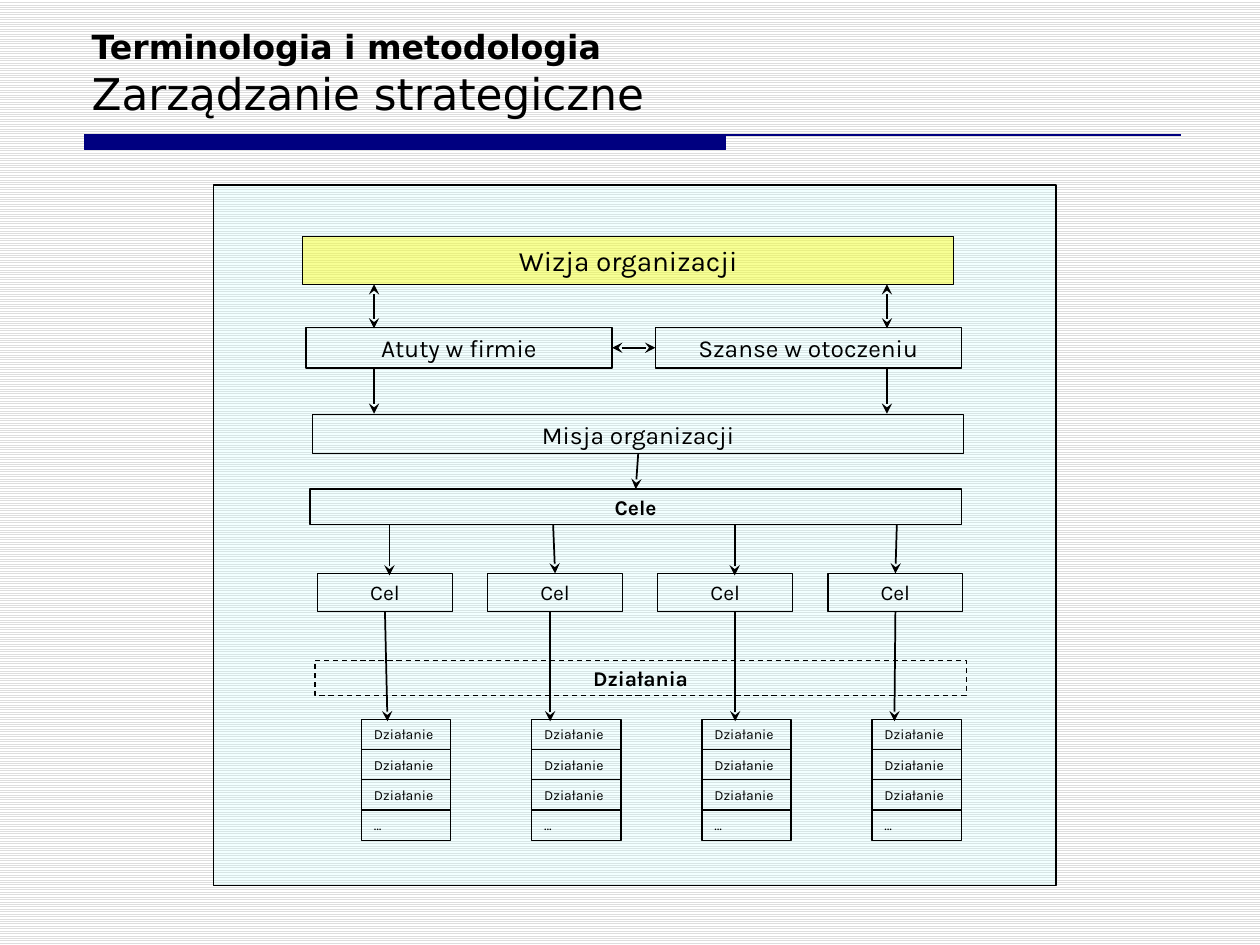
from pptx import Presentation
from pptx.dml.color import RGBColor
from pptx.enum.dml import MSO_LINE, MSO_PATTERN
from pptx.enum.shapes import MSO_CONNECTOR, MSO_SHAPE
from pptx.enum.text import MSO_ANCHOR, PP_ALIGN
from pptx.oxml.ns import qn
from pptx.util import Cm, Pt
from lxml.etree import SubElement

BLACK, NAVY = "000000", "000080"


def color(value):
    return RGBColor.from_string(value)


class Diagram:
    """Draws the parts of a strategy diagram on one slide."""

    body_font = "Karla"
    title_font = "DejaVu Sans"
    snap = Cm(0.08)

    def __init__(self, slide):
        self.slide = slide
        self.boxes = []

    def background(self, fore, back):
        fill = self.slide.background.fill
        fill.patterned()
        fill.pattern = MSO_PATTERN.LIGHT_HORIZONTAL
        fill.fore_color.rgb = color(fore)
        fill.back_color.rgb = color(back)

    def title(self, x, y, w, h, lines):
        frame = self.slide.shapes.add_textbox(Cm(x), Cm(y), Cm(w), Cm(h)).text_frame
        frame.word_wrap = True
        frame.vertical_anchor = MSO_ANCHOR.BOTTOM
        heading = frame.paragraphs[0]
        heading.font.name = self.title_font
        heading.font.color.rgb = color(BLACK)
        for index, (words, size, bold) in enumerate(lines):
            if index:
                heading.add_line_break()
            run = heading.add_run()
            run.text = words
            run.font.size = Pt(size)
            run.font.bold = bold

    def box(self, x, y, w, h, fill=None, opacity=100, line=BLACK, dashed=False):
        box = self.slide.shapes.add_shape(MSO_SHAPE.RECTANGLE, Cm(x), Cm(y), Cm(w), Cm(h))
        box.shadow.inherit = False
        if fill:
            box.fill.solid()
            box.fill.fore_color.rgb = color(fill)
            if opacity < 100:
                tint = box.fill._xPr.find(qn("a:solidFill"))[0]
                SubElement(tint, qn("a:alpha"), val=str(opacity * 1000))
        else:
            box.fill.background()
        box.line.color.rgb = color(line)
        box.line.width = Pt(0.75)
        if dashed:
            box.line.dash_style = MSO_LINE.DASH
        self.boxes.append(box)
        return box

    def label(self, words, size, x, y, w, h, bold=False, align=PP_ALIGN.CENTER, **style):
        frame = self.box(x, y, w, h, **style).text_frame
        frame.word_wrap = True
        frame.vertical_anchor = MSO_ANCHOR.MIDDLE
        paragraph = frame.paragraphs[0]
        paragraph.text = words
        paragraph.alignment = align
        font = paragraph.font
        font.name, font.size, font.bold = self.body_font, Pt(size), bold
        font.color.rgb = color(BLACK)

    def join(self, connect, x, y):
        for box in self.boxes:
            middle, center = box.left + box.width // 2, box.top + box.height // 2
            sides = [(middle, box.top), (box.left, center),
                     (middle, box.top + box.height), (box.left + box.width, center)]
            for site, (side_x, side_y) in enumerate(sides):
                if max(abs(side_x - x), abs(side_y - y)) <= self.snap:
                    connect(box, site)
                    return

    def line(self, x1, y1, x2, y2, stroke=BLACK, width=1, ends=()):
        start, finish = (Cm(x1), Cm(y1)), (Cm(x2), Cm(y2))
        line = self.slide.shapes.add_connector(MSO_CONNECTOR.STRAIGHT, *start, *finish)
        line.line.color.rgb = color(stroke)
        line.line.width = Pt(width)
        for end in ends:
            SubElement(line.line._get_or_add_ln(), qn(end), type="stealth")
        SubElement(line._element.spPr, qn("a:effectLst"))
        if ends:
            self.join(line.begin_connect, *start)
            self.join(line.end_connect, *finish)

    def arrow(self, x1, y1, x2, y2):
        self.line(x1, y1, x2, y2, ends=["a:tailEnd"])

    def double_arrow(self, x1, y1, x2, y2):
        self.line(x1, y1, x2, y2, ends=["a:headEnd", "a:tailEnd"])


def main():
    deck = Presentation()
    deck.slide_width, deck.slide_height = Cm(25.4), Cm(19.05)
    diagram = Diagram(deck.slides.add_slide(deck.slide_layouts[6]))
    diagram.background("DDDDDD", "FFFFFF")
    diagram.box(1.7, 2.72, 12.93, 0.3, fill=NAVY, line=NAVY)
    diagram.line(1.7, 2.72, 23.8, 2.72, stroke=NAVY, width=0.75)
    diagram.title(1.6, 0.84, 22.23, 1.68, [("Terminologia i metodologia", 19, True),
                                           ("Zarządzanie strategiczne", 25, False)])

    diagram.box(4.3, 3.73, 16.99, 14.12, fill="CCFFFF", opacity=24)
    wide, half = 13.13, 6.17
    diagram.label("Wizja organizacji", 16, 6.1, 4.77, wide, 0.97, fill="FFFF00", opacity=42)
    diagram.label("Atuty w firmie", 14, 6.17, 6.6, half, 0.82)
    diagram.label("Szanse w otoczeniu", 14, 13.21, 6.6, half, 0.82)
    diagram.label("Misja organizacji", 14, 6.3, 8.36, wide, 0.79)
    diagram.label("Cele", 12, 6.25, 9.86, wide, 0.71, bold=True)
    diagram.label("Działania", 12, 6.35, 13.31, wide, 0.71, bold=True, dashed=True)

    column_step, action_height = 3.43, 0.61
    actions = ["Działanie"] * 3 + ["…"]
    for column in range(4):
        shift = column * column_step
        diagram.label("Cel", 12, 6.4 + shift, 11.56, 2.72, 0.77)
        for row, action in enumerate(actions):
            diagram.label(action, 8, 7.29 + shift, 14.5 + row * action_height,
                          1.8, action_height, align=PP_ALIGN.LEFT)

    diagram.double_arrow(13.21, 7.01, 12.34, 7.01)
    for x in (7.54, 17.88):
        diagram.double_arrow(x, 5.73, x, 6.62)
        diagram.arrow(x, 7.42, x, 8.34)
    diagram.arrow(12.81, 9.15, 12.81, 9.84)
    for x in (7.85, 11.15, 14.81, 18.08):
        diagram.arrow(x, 10.57, x, 11.6)
    for x in (7.81, 11.09, 14.82, 18.03):
        diagram.arrow(x, 12.33, x, 14.54)

    deck.save("out.pptx")


if __name__ == "__main__":
    main()
